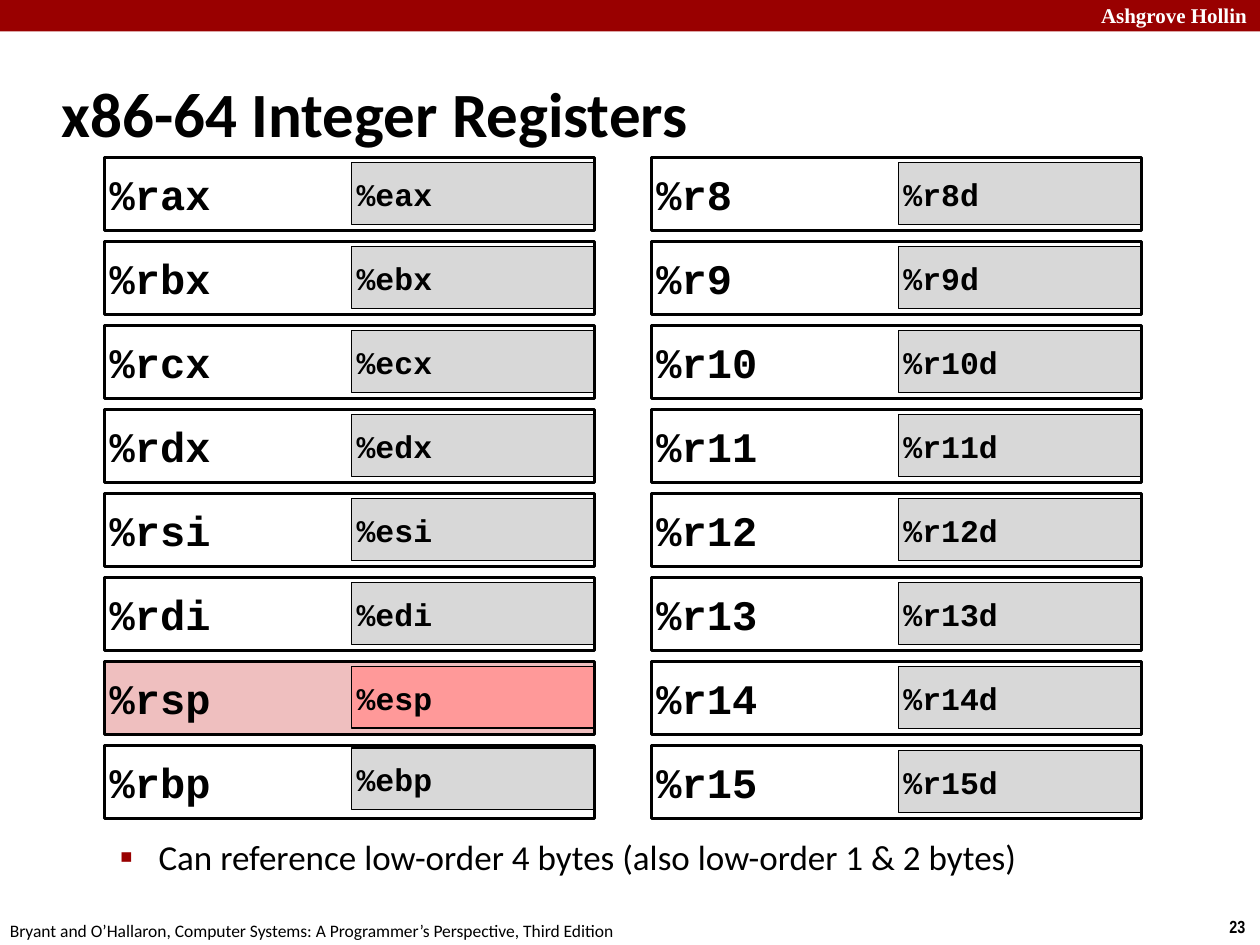
from pptx import Presentation as Deck
from pptx.dml.color import RGBColor as Rgb
from pptx.enum.shapes import MSO_SHAPE as Kind
from pptx.enum.text import MSO_ANCHOR as Anchor, MSO_AUTO_SIZE as Fit, PP_ALIGN as Align
from pptx.util import Inches, Pt
from lxml.etree import SubElement as Sub
from pptx.oxml.ns import qn

HUES = {"red": "990000", "white": "FFFFFF", "black": "000000",
        "gray": "D8D8D8", "pink": "EFBFBF", "rose": "FF9999"}
SIDES = ("margin_left", "margin_top", "margin_right", "margin_bottom")
LEFT = ["ax", "bx", "cx", "dx", "si", "di", "sp", "bp"]
COLS = [
    (0.83, [(f"%r{n}", f"%e{n}") for n in LEFT]),
    (5.17, [(f"%r{n}", f"%r{n}d") for n in range(8, 16)]),
]
TOP, STEP = 1.25, 2 / 3


class Page:
    def __init__(self, deck):
        self.slide = deck.slides.add_slide(deck.slide_layouts[5])
        self.shapes = self.slide.shapes

    def hue(self, name):
        return Rgb.from_string(HUES[name])

    def place(self, shape, box):
        for name, val in zip(("left", "top", "width", "height"), box):
            setattr(shape, name, Inches(val))

    def words(self, frame, text, face, size, bold=False, hue="black"):
        par = frame.paragraphs[0]
        par.text = text
        par.alignment = Align.LEFT
        font = par.runs[0].font
        for name, val in {"name": face, "size": Pt(size), "bold": bold}.items():
            setattr(font, name, val)
        font.color.rgb = self.hue(hue)
        return par

    def indent(self, par, left, hang):
        props = par._p.get_or_add_pPr()
        props.set("marL", str(Inches(left)))
        props.set("indent", str(Inches(-hang)))
        return props

    def title(self, text, box):
        shape = self.shapes.title
        self.place(shape, box)
        frame = shape.text_frame
        for name, val in {"vertical_anchor": Anchor.MIDDLE, "auto_size": Fit.NONE}.items():
            setattr(frame, name, val)
        self.indent(self.words(frame, text, "Calibri", 36, True), 0.13, 0.13)

    def label(self, text, box, face, size, bold=False, hue="black", wrap=True):
        frame = self.shapes.add_textbox(*map(Inches, box)).text_frame
        frame.word_wrap = wrap
        return self.words(frame, text, face, size, bold, hue)

    def bullet(self, text, box):
        par = self.label(text, box, "Calibri", 20)
        par.space_before = Pt(4)
        props = self.indent(par, 0.81, 0.31)
        Sub(Sub(props, qn("a:buClr")), qn("a:srgbClr"), val=HUES["red"])
        Sub(props, qn("a:buSzPct"), val="110000")
        Sub(props, qn("a:buFont"), typeface="Arial")
        Sub(props, qn("a:buChar"), char="▪")

    def rect(self, box, fill=None, line=None):
        shape = self.shapes.add_shape(Kind.RECTANGLE, *map(Inches, box))
        shape.shadow.inherit = False
        if fill:
            shape.fill.solid()
            shape.fill.fore_color.rgb = self.hue(fill)
        else:
            shape.fill.background()
        if line:
            shape.line.color.rgb = self.hue("black")
            shape.line.width = Pt(line)
        else:
            shape.line.fill.background()
        return shape

    def cell(self, text, box, size, fill, line):
        frame = self.rect(box, fill, line).text_frame
        for name, val in {"vertical_anchor": Anchor.MIDDLE, "word_wrap": True,
                          **dict.fromkeys(SIDES, Inches(0.04))}.items():
            setattr(frame, name, val)
        self.words(frame, text, "Courier New", size, True)

    def pair(self, x, y, full, low):
        stack = full == "%rsp"
        lift = 0.02 if full == "%rbp" else 0
        outer = (full, (x, y, 3.89, 0.58), 24, "pink" if stack else None, 2)
        inner = (low, (x + 1.96, y + 0.04 - lift, 1.92 if stack else 1.93, 0.49), 18,
                 "rose" if stack else "gray", 1 if stack else 0.75)
        for part in (outer, inner) if stack else (inner, outer):
            self.cell(*part)


def main():
    deck = Deck()
    deck.slide_width, deck.slide_height = Inches(10), Inches(7.5)
    page = Page(deck)
    page.rect((0, 0, 10, 0.25), "red")
    page.label("Ashgrove Hollin", (8.64, -0.03, 1.43, 0.3),
               "Times New Roman", 12, True, "white")
    page.label("23", (9.66, 7.22, 0.34, 0.27), "Arial Narrow", 10, True, wrap=False)
    page.label("Bryant and O’Hallaron, Computer Systems: A Programmer’s Perspective, Third Edition",
               (-0.02, 7.25, 5.08, 0.27), "Calibri", 10, wrap=False)
    page.title("x86-64 Integer Registers", (0.39, 0.48, 8.3, 0.83))
    page.bullet("Can reference low-order 4 bytes (also low-order 1 & 2 bytes)",
                (0.35, 6.58, 8.02, 0.92))
    for x, names in COLS:
        for row, (full, low) in enumerate(names):
            page.pair(x, TOP + row * STEP, full, low)
    deck.save("out.pptx")


if __name__ == "__main__":
    main()
